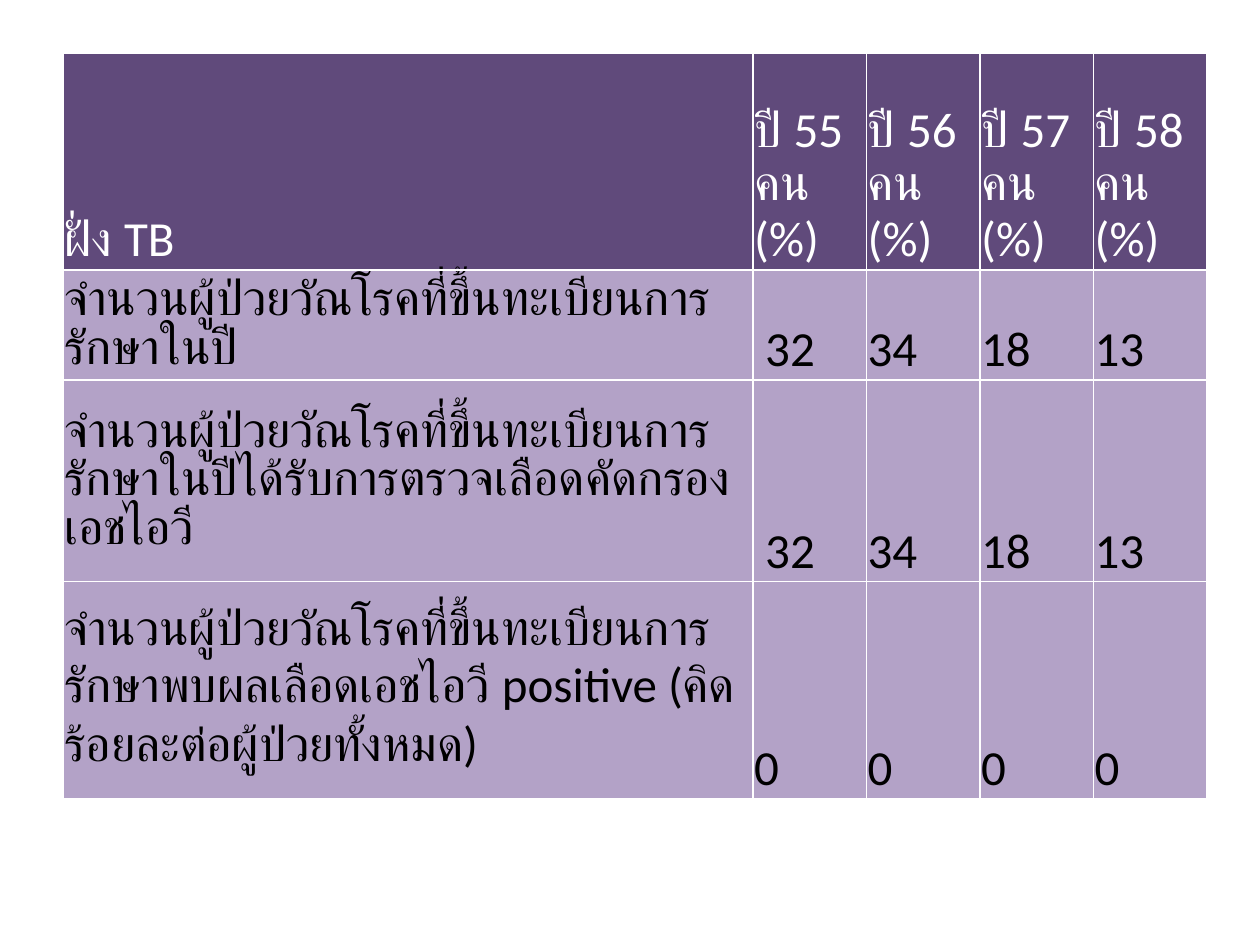
from lxml import etree
from pptx import Presentation
from pptx.dml.color import RGBColor
from pptx.enum.text import MSO_ANCHOR
from pptx.oxml.ns import qn
from pptx.util import Inches, Pt

PURPLE, LILAC, WHITE, BLACK = "604A7B", "B3A2C7", "FFFFFF", "000000"
COLS = [5.47] + [0.9] * 4
HEIGHTS = [1.72, 0.87, 1.6, 1.72]
ROWS = [
    ["ฝั่ง TB"] + [f"ปี {year} คน (%)" for year in range(55, 59)],
    ["จำนวนผู้ป่วยวัณโรคที่ขึ้นทะเบียนการรักษาในปี",
     " 32", "34", "18", "13"],
    ["จำนวนผู้ป่วยวัณโรคที่ขึ้นทะเบียนการรักษาในปีได้รับการตรวจเลือดคัดกรองเอชไอวี",
     " 32", "34", "18", "13"],
    ["จำนวนผู้ป่วยวัณโรคที่ขึ้นทะเบียนการรักษาพบผลเลือดเอชไอวี positive "
     "(คิดร้อยละต่อผู้ป่วยทั้งหมด)"] + ["0"] * 4,
]


def paint(fill, color):
    fill.solid()
    fill.fore_color.rgb = RGBColor.from_string(color)


def add_borders(cell, color, width):
    props = cell._tc.get_or_add_tcPr()
    # Borders must come before the cell fill
    for place, side in enumerate(("lnL", "lnR", "lnT", "lnB")):
        line = etree.Element(qn(f"a:{side}"), w=str(Pt(width)))
        solid = etree.SubElement(line, qn("a:solidFill"))
        etree.SubElement(solid, qn("a:srgbClr"), val=color)
        props.insert(place, line)


def fill_cell(cell, text, back, color, anchor):
    cell.text = text
    cell.vertical_anchor = anchor
    cell.margin_left = cell.margin_right = cell.margin_top = Inches(0.01)
    cell.margin_bottom = 0
    paint(cell.fill, back)
    font = cell.text_frame.paragraphs[0].font
    font.name, font.size, font.bold = "Calibri", Pt(28), False
    paint(font.fill, color)
    add_borders(cell, WHITE, 1)


def add_counts(slide, left, top, width, height):
    table = slide.shapes.add_table(
        len(ROWS), len(COLS), left, top, width, height).table
    for col, size in zip(table.columns, COLS):
        col.width = int(width * size / sum(COLS))
    for row, size in zip(table.rows, HEIGHTS):
        row.height = int(height * size / sum(HEIGHTS))
    for r, texts in enumerate(ROWS):
        back, color = (LILAC, BLACK) if r else (PURPLE, WHITE)
        for c, text in enumerate(texts):
            label = r > 0 and c == 0
            anchor = MSO_ANCHOR.MIDDLE if label else MSO_ANCHOR.BOTTOM
            fill_cell(table.cell(r, c), text, back, color, anchor)


def main():
    deck = Presentation()
    deck.slide_width, deck.slide_height = Inches(10), Inches(7.5)
    slide = deck.slides.add_slide(deck.slide_layouts[6])
    # Yearly patient counts
    add_counts(slide, Inches(0.5), Inches(0.42), Inches(9.08), Inches(5.92))
    deck.save("out.pptx")


if __name__ == "__main__":
    main()
